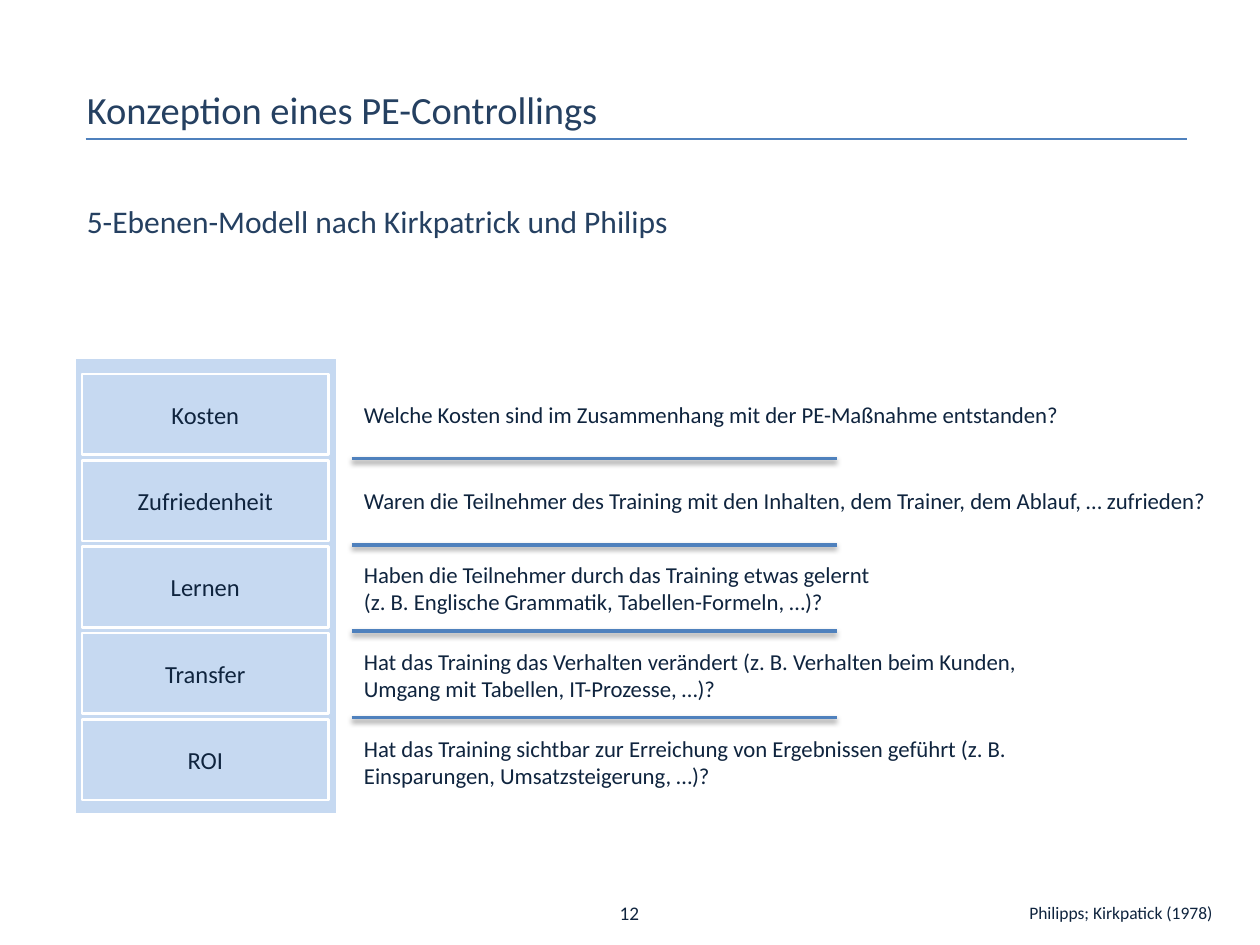
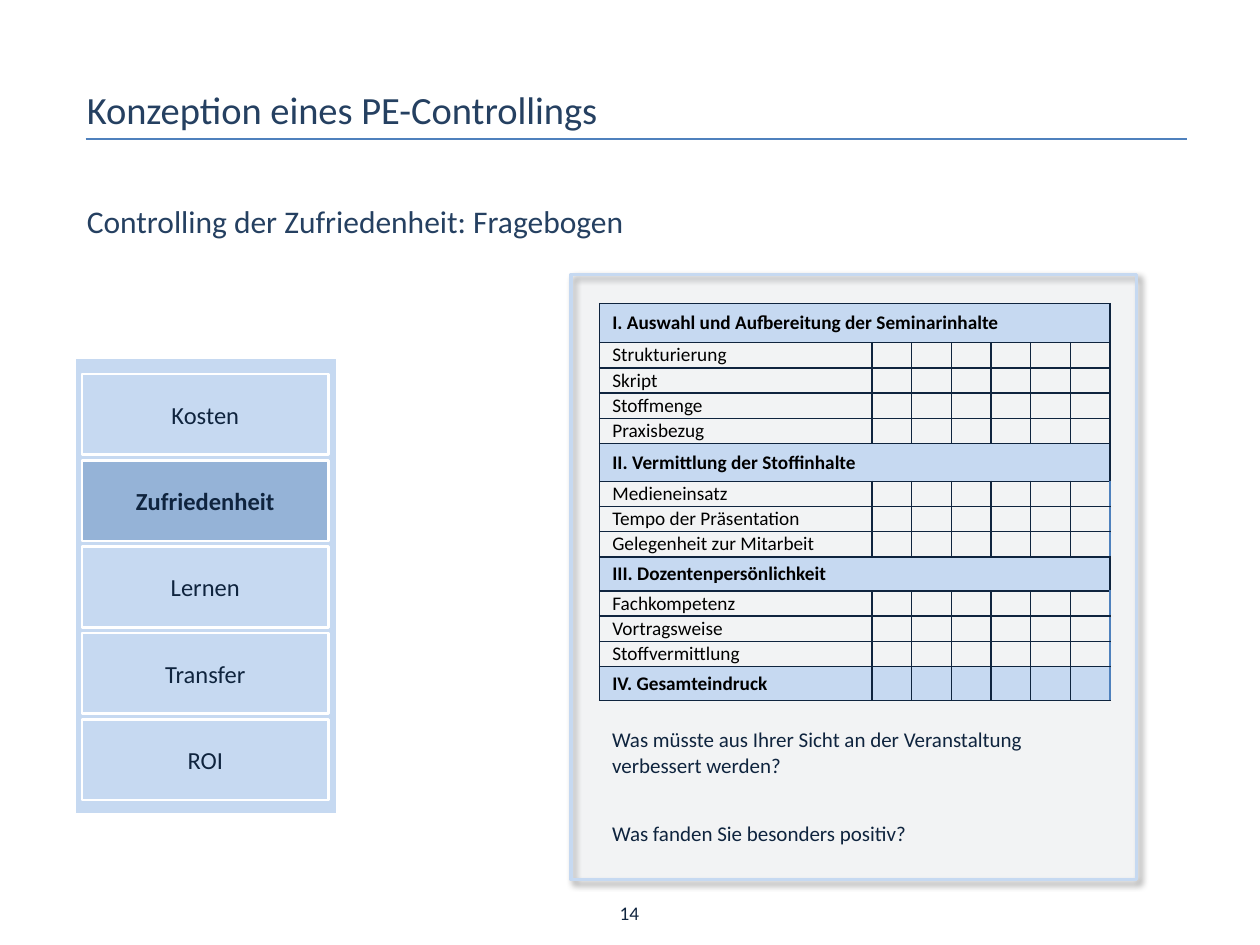
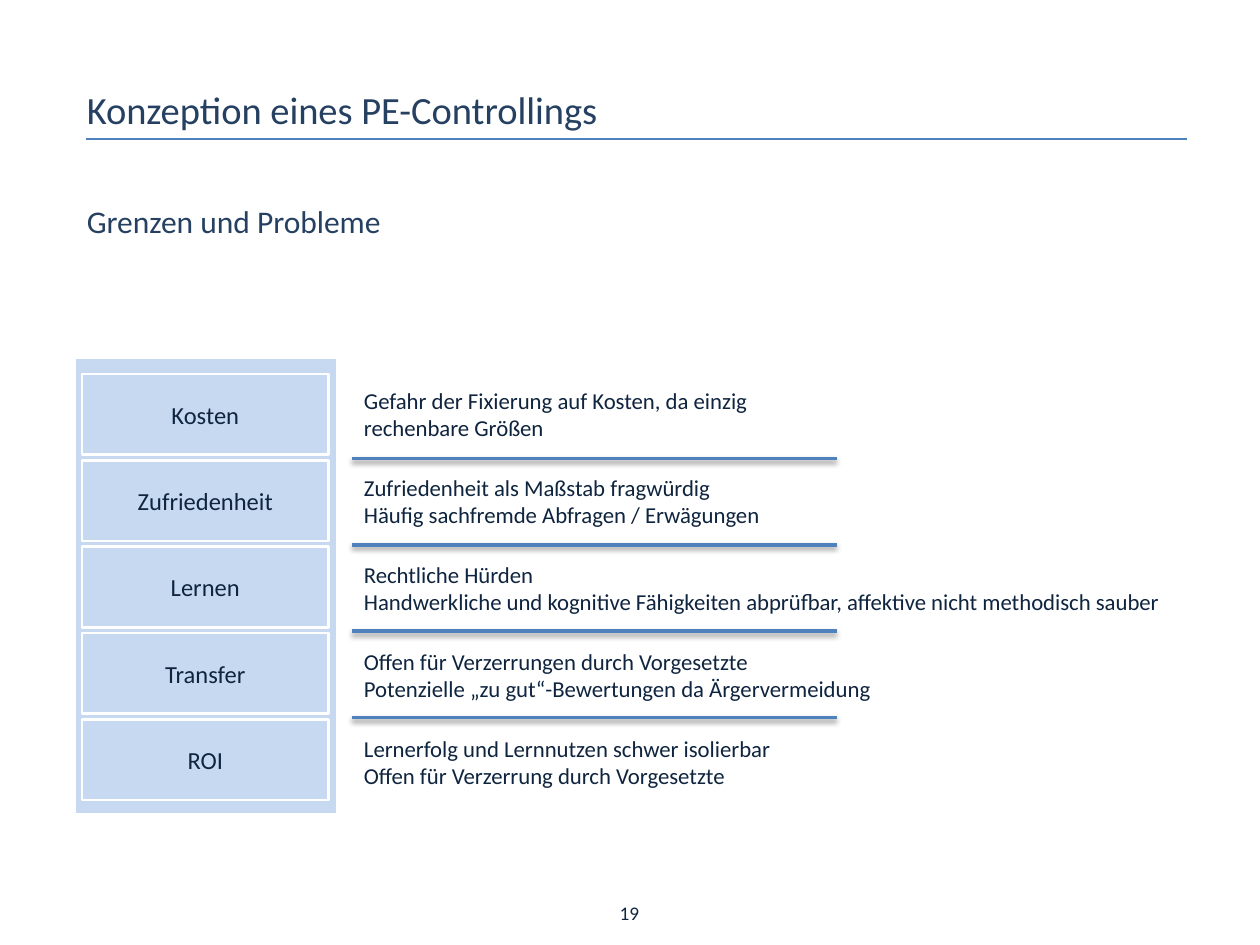
"""Builds three slides on the five-level model of training evaluation."""
import pptx
import pptx.dml.color
import pptx.enum.shapes
import pptx.enum.text
import pptx.oxml.ns
import pptx.util
from lxml import etree
from pptx.util import Inches, Pt

RGBColor = pptx.dml.color.RGBColor
ALIGN = pptx.enum.text.PP_ALIGN
ANCHOR = pptx.enum.text.MSO_ANCHOR
RECTANGLE = pptx.enum.shapes.MSO_SHAPE.RECTANGLE
STRAIGHT = pptx.enum.shapes.MSO_CONNECTOR.STRAIGHT
qn = pptx.oxml.ns.qn

FONT = "Calibri"
HEADING = RGBColor(0x25, 0x40, 0x61)
TEXT = RGBColor(0x0F, 0x24, 0x3E)
NUMBER = RGBColor(0x10, 0x25, 0x3F)
ACCENT = RGBColor(0x4F, 0x81, 0xBD)
LIGHT = RGBColor(0xC6, 0xD9, 0xF1)
HIGHLIGHT = RGBColor(0x95, 0xB3, 0xD7)
PANEL = RGBColor(0xDC, 0xE6, 0xF2)
WHITE = RGBColor(0xFF, 0xFF, 0xFF)
BLACK = RGBColor(0, 0, 0)

TITLE = "Konzeption eines PE-Controllings"
LEVELS = ["Kosten", "Zufriedenheit", "Lernen", "Transfer", "ROI"]
LEVEL_TOP, LEVEL_STEP = 2.97, 0.685

QUESTIONS = [
    (6.15, 1, ["Welche Kosten sind im Zusammenhang mit der PE-Maßnahme entstanden?"]),
    (6.94, 1, ["Waren die Teilnehmer des Training mit den Inhalten, dem Trainer, "
               "dem Ablauf, … zufrieden?"]),
    (4.34, 2, ["Haben die Teilnehmer durch das Training etwas gelernt "
               "(z. B. Englische Grammatik, Tabellen-Formeln, …)?"]),
    (5.6, 2, ["Hat das Training das Verhalten verändert (z. B. Verhalten beim Kunden, "
              "Umgang mit Tabellen, IT-Prozesse, …)?"]),
    (5.91, 2, ["Hat das Training sichtbar zur Erreichung von Ergebnissen geführt "
               "(z. B. Einsparungen, Umsatzsteigerung, …)?"]),
]
LIMITS = [
    (4.02, 2, ["Gefahr der Fixierung auf Kosten, da einzig rechenbare Größen"]),
    (5.84, 2, ["Zufriedenheit als Maßstab fragwürdig",
               "Häufig sachfremde Abfragen / Erwägungen"]),
    (6.93, 2, ["Rechtliche Hürden", "Handwerkliche und kognitive Fähigkeiten abprüfbar, "
               "affektive nicht methodisch sauber"]),
    (5.05, 2, ["Offen für Verzerrungen durch Vorgesetzte",
               "Potenzielle „zu gut“-Bewertungen da Ärgervermeidung"]),
    (5.05, 2, ["Lernerfolg und Lernnutzen schwer isolierbar",
               "Offen für Verzerrung durch Vorgesetzte"]),
]
SURVEY = [
    ("I. Auswahl und Aufbereitung der Seminarinhalte", 0.31,
     ["Strukturierung", "Skript", "Stoffmenge", "Praxisbezug"]),
    ("II. Vermittlung der Stoffinhalte", 0.3,
     ["Medieneinsatz", "Tempo der Präsentation", "Gelegenheit zur Mitarbeit"]),
    ("III. Dozentenpersönlichkeit", 0.27,
     ["Fachkompetenz", "Vortragsweise", "Stoffvermittlung"]),
    ("IV. Gesamteindruck", 0.27, []),
]
SURVEY_WIDTH, LABEL_WIDTH, RATINGS, ITEM_HEIGHT = 4.05, 2.16, 6, 0.2
FIRST_ACCENT_ROW = 6


def style(para, size, color, bold=False, align=ALIGN.LEFT):
    """Set the font and alignment of a paragraph."""
    para.alignment = align
    para.font.name, para.font.size, para.font.bold = FONT, Pt(size), bold
    para.font.color.rgb = color


def add_text(page, place, lines, size, color=TEXT, align=ALIGN.LEFT, anchor=ANCHOR.TOP):
    """Add a wrapping text box with one paragraph per line."""
    frame = page.shapes.add_textbox(*map(Inches, place)).text_frame
    frame.word_wrap, frame.vertical_anchor = True, anchor
    frame.text = "\n".join(lines)
    for para in frame.paragraphs:
        style(para, size, color, align=align)


def set_shadow(shape, alpha=0, blur=0, distance=0, angle=0):
    """Replace the theme shadow by the given one, or by none."""
    effects = etree.SubElement(shape._element.spPr, qn("a:effectLst"))
    if alpha:
        shadow = etree.SubElement(effects, qn("a:outerShdw"), blurRad=str(Pt(blur)),
                                  dist=str(Pt(distance)), dir=str(angle * 60000),
                                  rotWithShape="0")
        color = etree.SubElement(shadow, qn("a:srgbClr"), val=str(BLACK))
        etree.SubElement(color, qn("a:alpha"), val=str(alpha * 1000))


def add_rectangle(shapes, place, fill, line, width):
    """Add a filled and outlined rectangle."""
    box = shapes.add_shape(RECTANGLE, *map(Inches, place))
    box.fill.solid()
    box.fill.fore_color.rgb = fill
    box.line.color.rgb, box.line.width = line, Pt(width)
    return box


def add_rule(page, left, right, top, width, **shadow):
    """Add a horizontal line."""
    rule = page.shapes.add_connector(STRAIGHT, *map(Inches, (left, top, right, top)))
    rule.line.color.rgb, rule.line.width = ACCENT, Pt(width)
    set_shadow(rule, **shadow)


def add_page(deck, number, subtitle, height, active=None):
    """Add a slide with title, subtitle, page number and the column of levels."""
    page = deck.slides.add_slide(deck.slide_layouts[6])
    add_rule(page, 0.68, 9.42, 1.1, 1.25)
    add_text(page, (4.72, 7.1, 0.55, 0.29), [str(number)], 11, NUMBER, ALIGN.CENTER)
    add_text(page, (0.59, 0.63, 7.48, 0.47), [TITLE], 22, HEADING)
    add_text(page, (0.59, 1.55, 9.21, height), [subtitle], 18, HEADING)

    column = page.shapes.add_group_shape().shapes
    set_shadow(add_rectangle(column, (0.59, 2.84, 2.09, 3.62), LIGHT, WHITE, 1.5))
    for index, level in enumerate(LEVELS):
        chosen = level == active
        place = (0.65, LEVEL_TOP + index * LEVEL_STEP, 1.96, 0.64)
        box = add_rectangle(column, place, HIGHLIGHT if chosen else LIGHT, WHITE, 1.5)
        set_shadow(box)
        box.text_frame.text = level
        box.text_frame.vertical_anchor = ANCHOR.MIDDLE
        style(box.text_frame.paragraphs[0], 14, TEXT, chosen, ALIGN.CENTER)
    return page


def add_remarks(page, remarks):
    """Put one remark beside each level, with rules between them."""
    for index, (width, line_count, lines) in enumerate(remarks):
        height = 0.1 + 0.22 * line_count
        top = 3.285 + index * 0.69 - height / 2
        add_text(page, (2.79, top, width, height), lines, 13, anchor=ANCHOR.MIDDLE)
        if index:
            add_rule(page, 2.79, 6.64, 3.64 + (index - 1) * LEVEL_STEP, 2,
                     alpha=38, blur=3.1, distance=1.6, angle=90)


def style_cell(cell, text, filled, bold, right_color):
    """Set text, borders and fill of a survey cell."""
    cell.margin_top = cell.margin_bottom = 0
    cell.vertical_anchor = ANCHOR.MIDDLE
    cell.text = text
    para = cell.text_frame.paragraphs[0]
    style(para, 11, BLACK, bold)
    if not text:
        etree.SubElement(para._p, qn("a:endParaRPr"), sz="1100")
    properties = cell._tc.get_or_add_tcPr()
    for side in "LRTB":
        border = etree.SubElement(properties, qn(f"a:ln{side}"), w=str(Pt(1)))
        paint = etree.SubElement(border, qn("a:solidFill"))
        color = right_color if side == "R" else TEXT
        etree.SubElement(paint, qn("a:srgbClr"), val=str(color))
    if filled:
        cell.fill.solid()
        cell.fill.fore_color.rgb = LIGHT
    else:
        cell.fill.background()


def add_survey(page):
    """Add the questionnaire table."""
    rows = []
    for heading, height, items in SURVEY:
        rows.append((heading, height, True, bool(items)))
        rows += [(item, ITEM_HEIGHT, False, False) for item in items]
    total = sum(row[1] for row in rows)
    table = page.shapes.add_table(len(rows), RATINGS + 1, Inches(4.76), Inches(2.41),
                                  Inches(SURVEY_WIDTH), Inches(total)).table
    table.first_row = table.horz_banding = False
    for index, column in enumerate(table.columns):
        rating_width = (SURVEY_WIDTH - LABEL_WIDTH) / RATINGS
        column.width = Inches(rating_width if index else LABEL_WIDTH)
    for row, (label, height, heading, merged) in enumerate(rows):
        table.rows[row].height = Inches(height)
        for column in range(RATINGS + 1):
            accent = column == RATINGS and row >= FIRST_ACCENT_ROW and not merged
            style_cell(table.cell(row, column), "" if column else label, heading,
                       heading, ACCENT if accent else TEXT)
        if merged:
            table.cell(row, 0).merge(table.cell(row, RATINGS))


def add_questionnaire(page):
    """Add the framed questionnaire with its open questions."""
    panel = add_rectangle(page.shapes, (4.53, 2.18, 4.49, 4.8), PANEL, LIGHT, 2)
    color = panel._element.spPr.find(qn("a:solidFill"))[0]
    etree.SubElement(color, qn("a:alpha"), val="10000")
    set_shadow(panel, alpha=40, blur=4, distance=3, angle=45)
    add_survey(page)
    add_text(page, (4.76, 5.72, 4.07, 0.5),
             ["Was müsste aus Ihrer Sicht an der Veranstaltung verbessert werden?"], 12)
    add_text(page, (4.76, 6.46, 3.15, 0.3), ["Was fanden Sie besonders positiv?"], 12)


def main():
    """Build and save the deck."""
    deck = pptx.Presentation()
    deck.slide_width, deck.slide_height = Inches(10), Inches(7.5)

    model = add_page(deck, 12, "5-Ebenen-Modell nach Kirkpatrick und Philips", 1.62)
    add_remarks(model, QUESTIONS)
    add_text(model, (7.52, 7.11, 2.2, 0.27), ["Philipps; Kirkpatick (1978)"], 10,
             align=ALIGN.RIGHT)

    survey = add_page(deck, 14, "Controlling der Zufriedenheit: Fragebogen", 1.31,
                      "Zufriedenheit")
    add_questionnaire(survey)

    limits = add_page(deck, 19, "Grenzen und Probleme", 0.71)
    add_remarks(limits, LIMITS)
    deck.save("out.pptx")


if __name__ == "__main__":
    main()
